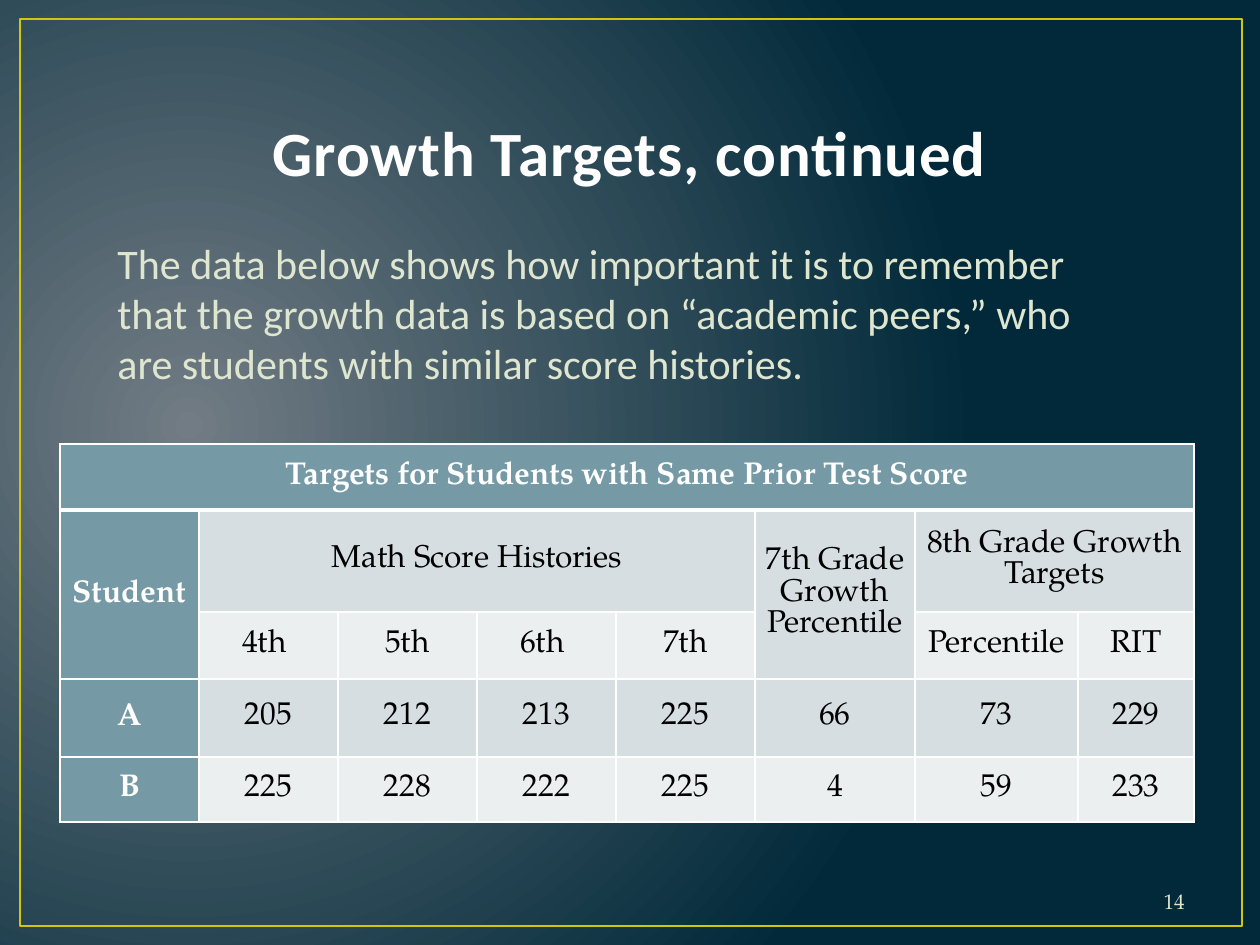
from pptx import Presentation
from pptx.dml.color import RGBColor
from pptx.enum.shapes import MSO_SHAPE
from pptx.enum.text import MSO_ANCHOR, PP_ALIGN
from pptx.oxml import parse_xml
from pptx.oxml.ns import nsdecls
from pptx.util import Pt

PX = 914400 // 126
SANS, SERIF = "Calibri", "TeX Gyre Pagella"
WHITE = RGBColor(0xFF, 0xFF, 0xFF)
TITLE_WHITE = RGBColor(0xFE, 0xFE, 0xFE)
BLACK = RGBColor(0, 0, 0)
CREAM = RGBColor(0xDF, 0xE6, 0xD0)
YELLOW = RGBColor(0xCF, 0xC6, 0x0D)
TEAL = RGBColor(0x75, 0x9A, 0xA5)
BAND_DARK = RGBColor(0xD6, 0xDE, 0xE1)
BAND_LIGHT = RGBColor(0xEC, 0xEF, 0xF0)
GLOW = RGBColor(0x71, 0x7C, 0x84)
NAVY = RGBColor(0x01, 0x29, 0x3A)

TITLE = "Growth Targets, continued"
INTRO = ("The data below shows how important it is to remember that the growth data "
         "is based on “academic peers,” who are students with similar score histories.")
PAGE = "14"

ROWS = [
    ["Targets for Students with Same Prior Test Score"] + [""] * 7,
    ["Student", "Math Score Histories", "", "", "", "7th Grade Growth Percentile",
     "8th Grade Growth Targets", ""],
    ["", "4th ", "5th", "6th ", "7th", "", "Percentile", "RIT"],
    ["A", "205", "212", "213", "225", "66", "73", "229"],
    ["B", "225", "228", "222", "225", "4", "59", "233"],
]
MERGES = [((0, 0), (0, 7)), ((1, 0), (2, 0)), ((1, 1), (1, 4)),
          ((1, 5), (2, 5)), ((1, 6), (1, 7))]
COLUMN_WIDTHS = [139] * 5 + [160, 163, 116]
ROW_HEIGHTS = [66, 102, 67, 78, 65]
BANDS = [TEAL, BAND_DARK, BAND_LIGHT, BAND_DARK, BAND_LIGHT]


def scaled(*lengths):
    return [length * PX for length in lengths]


def write(frame, text, size, font, color, bold=False, align=PP_ALIGN.LEFT):
    paragraph = frame.paragraphs[0]
    paragraph.alignment = align
    run = paragraph.add_run()
    run.text = text
    run.font.size, run.font.name, run.font.bold = Pt(size), font, bold
    run.font.color.rgb = color
    return run


def add_text(slide, box, anchor, *args, **kwargs):
    frame = slide.shapes.add_textbox(*scaled(*box)).text_frame
    frame.word_wrap = True
    frame.vertical_anchor = anchor
    return write(frame, *args, **kwargs)


def set_background(slide):
    """Radial glow, centred left of the middle."""
    slide.element.cSld.insert(0, parse_xml(
        f'<p:bg {nsdecls("p", "a")}><p:bgPr><a:gradFill rotWithShape="1"><a:gsLst>'
        f'<a:gs pos="0"><a:srgbClr val="{GLOW}"/></a:gs>'
        f'<a:gs pos="100000"><a:srgbClr val="{NAVY}"/></a:gs></a:gsLst>'
        '<a:path path="circle"><a:fillToRect l="15000" t="50000" r="85000" b="60000"/></a:path>'
        '</a:gradFill><a:effectLst/></p:bgPr></p:bg>'))


def set_borders(cell, top, bottom):
    """White borders; top and bottom widths are in points."""
    properties = cell._tc.get_or_add_tcPr()
    for place, (side, width) in enumerate(
            [("L", 1), ("R", 1), ("T", top), ("B", bottom)]):
        properties.insert(place, parse_xml(
            f'<a:ln{side} {nsdecls("a")} w="{Pt(width)}"><a:solidFill>'
            f'<a:srgbClr val="{WHITE}"/></a:solidFill></a:ln{side}>'))


def add_score_table(slide):
    table = slide.shapes.add_table(
        len(ROWS), len(COLUMN_WIDTHS),
        *scaled(60, 444, sum(COLUMN_WIDTHS), sum(ROW_HEIGHTS))).table
    for column, width in zip(table.columns, COLUMN_WIDTHS):
        column.width = width * PX
    for row, height in zip(table.rows, ROW_HEIGHTS):
        row.height = height * PX
    for start, end in MERGES:
        table.cell(*start).merge(table.cell(*end))

    for r, values in enumerate(ROWS):
        for c, value in enumerate(values):
            cell = table.cell(r, c)
            heading = r == 0 or c == 0
            cell.fill.solid()
            cell.fill.fore_color.rgb = TEAL if heading else BANDS[r]
            set_borders(cell, 3 if r == 1 else 1, 3 if r == 0 else 1)
            cell.vertical_anchor = MSO_ANCHOR.MIDDLE
            cell.margin_left = cell.margin_right = 9 * PX
            cell.margin_top = cell.margin_bottom = 0
            if value:
                write(cell.text_frame, value, 18, SERIF, WHITE if heading else BLACK,
                      bold=heading, align=PP_ALIGN.CENTER)
                cell.text_frame.paragraphs[0].line_spacing = Pt(18)


def main():
    deck = Presentation()
    deck.slide_width, deck.slide_height = scaled(1260, 945)
    slide = deck.slides.add_slide(deck.slide_layouts[6])
    set_background(slide)

    frame = slide.shapes.add_shape(MSO_SHAPE.RECTANGLE, *scaled(20, 19, 1222, 907))
    frame.shadow.inherit = False
    frame.fill.background()
    frame.line.color.rgb = YELLOW
    frame.line.width = Pt(1.5)

    title = add_text(slide, (63, 38, 1134, 157), MSO_ANCHOR.BOTTOM, TITLE, 36, SANS,
                     TITLE_WHITE, bold=True, align=PP_ALIGN.CENTER)
    title.font._element.set("spc", "50")
    add_text(slide, (1092, 876, 105, 50), MSO_ANCHOR.MIDDLE, PAGE, 12, SERIF, CREAM,
             align=PP_ALIGN.RIGHT)
    add_text(slide, (105, 231, 1040, 165), MSO_ANCHOR.TOP, INTRO, 24, SANS, CREAM)
    add_score_table(slide)
    deck.save("out.pptx")


if __name__ == "__main__":
    main()
